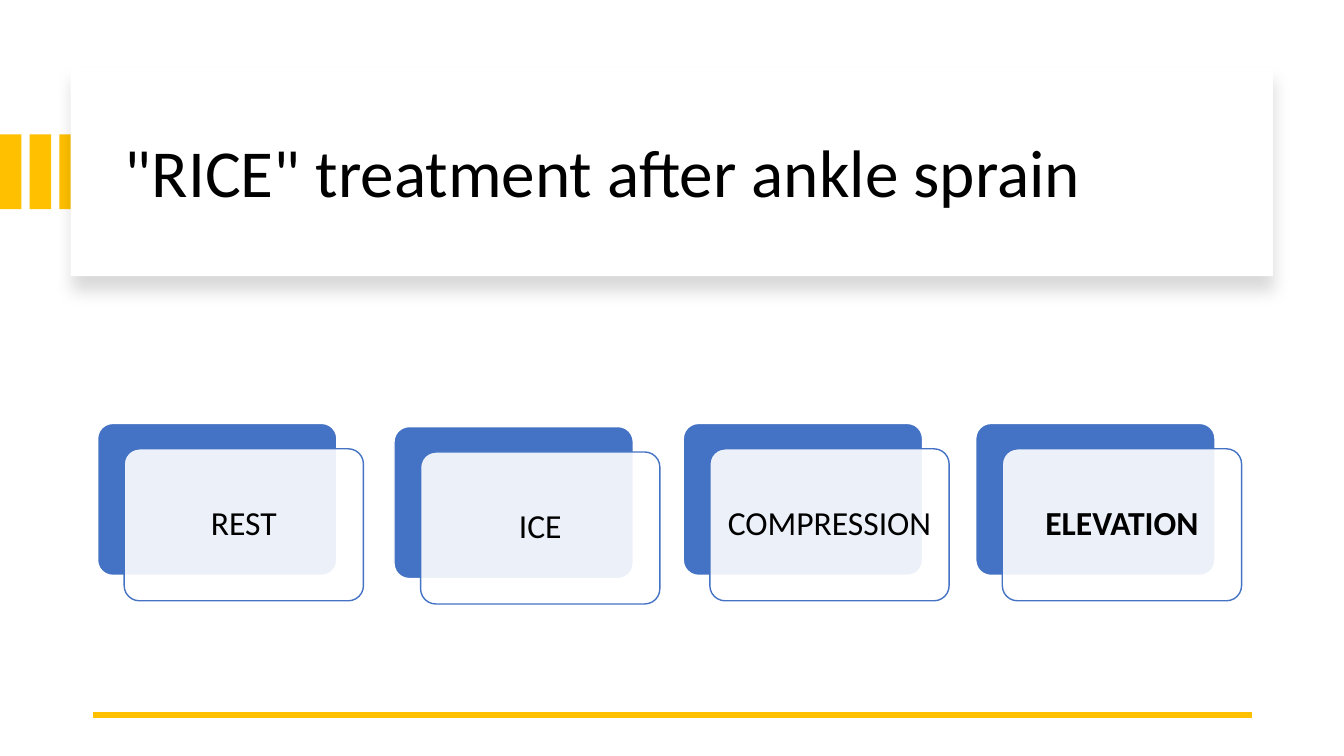
from lxml import etree
from pptx import Presentation
from pptx.dml.color import RGBColor
from pptx.enum.shapes import MSO_CONNECTOR, MSO_SHAPE
from pptx.enum.text import MSO_ANCHOR, PP_ALIGN
from pptx.oxml.ns import qn
from pptx.util import Cm, Pt

GOLD = RGBColor(0xFF, 0xC0, 0x00)
BLUE = RGBColor(0x44, 0x72, 0xC4)
WHITE = RGBColor(0xFF, 0xFF, 0xFF)
BLACK = RGBColor(0x00, 0x00, 0x00)
FONT = "Calibri"

# Label, left, top (cm), bold
STEPS = [
    ("REST", 2.46, 10.67, False),
    ("ICE", 9.93, 10.75, False),
    ("COMPRESSION", 17.22, 10.67, False),
    ("ELEVATION", 24.59, 10.67, True),
]


def add_box(s, kind, x, y, w, h, fill, line=None):
    sp = s.shapes.add_shape(kind, Cm(x), Cm(y), Cm(w), Cm(h))
    sp.shadow.inherit = False
    sp.fill.solid()
    sp.fill.fore_color.rgb = fill
    if line is None:
        sp.line.fill.background()
    else:
        sp.line.color.rgb = line
        sp.line.width = Pt(1)
    return sp


def add_text(s, x, y, w, h, text, size, bold=False, align=PP_ALIGN.LEFT):
    tf = s.shapes.add_textbox(Cm(x), Cm(y), Cm(w), Cm(h)).text_frame
    tf.word_wrap = True
    tf.vertical_anchor = MSO_ANCHOR.MIDDLE
    tf.margin_left = tf.margin_right = Cm(0.25)
    tf.text = text
    p = tf.paragraphs[0]
    p.alignment = align
    p.line_spacing = 0.9
    font = p.runs[0].font
    font.name, font.size, font.bold = FONT, Pt(size), bold
    font.color.rgb = BLACK


def set_alpha(parent, percent):
    color = parent.find(".//" + qn("a:srgbClr"))
    etree.SubElement(color, qn("a:alpha"), val=str(percent * 1000))


def add_soft_shadow(sp):
    effects = sp._element.spPr.find(qn("a:effectLst"))
    shadow = etree.SubElement(
        effects, qn("a:outerShdw"), blurRad=str(Pt(11)), dist=str(Pt(10)),
        dir=str(90 * 60000), algn="t", rotWithShape="0")
    etree.SubElement(shadow, qn("a:srgbClr"), val=str(BLACK))
    set_alpha(shadow, 15)


def add_header(s, x, y, w, h):
    # Gold stripes running in from the slide edge
    for i in range(3):
        add_box(s, MSO_SHAPE.RECTANGLE, i * 0.75, y + 1.69, 0.54, 1.88, GOLD)
    # White panel and title
    panel = add_box(s, MSO_SHAPE.RECTANGLE, x, y, w, h, WHITE)
    add_soft_shadow(panel)
    add_text(s, x + 1.12, y + 0.56, w - 2.03, 4.32,
             '"RICE" treatment after ankle sprain', 48)


def add_step(s, x, y, w, h, label, bold):
    # Blue card behind, translucent white card in front
    back = add_box(s, MSO_SHAPE.ROUNDED_RECTANGLE, x, y, w, h, BLUE, WHITE)
    x, y = x + 0.67, y + 0.64
    front = add_box(s, MSO_SHAPE.ROUNDED_RECTANGLE, x, y, w, h, WHITE, BLUE)
    for card in (back, front):
        card.adjustments[0] = 0.1
    set_alpha(front._element.spPr.find(qn("a:solidFill")), 90)
    # Label
    add_text(s, x + 0.11, y + 0.11, w - 0.22, h - 0.22, label, 24, bold,
             PP_ALIGN.CENTER)


def add_footer_rule(s, x, y, w):
    rule = s.shapes.add_connector(MSO_CONNECTOR.STRAIGHT, Cm(x + w), Cm(y),
                                  Cm(x), Cm(y))
    rule.line.color.rgb = GOLD
    rule.line.width = Pt(4.5)
    etree.SubElement(rule._element.spPr, qn("a:effectLst"))


def main():
    prs = Presentation()
    prs.slide_width, prs.slide_height = Cm(33.87), Cm(19.05)
    s = prs.slides.add_slide(prs.slide_layouts[6])
    add_header(s, 1.78, 1.7, 30.3, 5.26)
    add_footer_rule(s, 2.34, 18.01, 29.21)
    for label, x, y, bold in STEPS:
        add_step(s, x, y, 6.03, 3.83, label, bold)
    prs.save("out.pptx")


if __name__ == "__main__":
    main()
